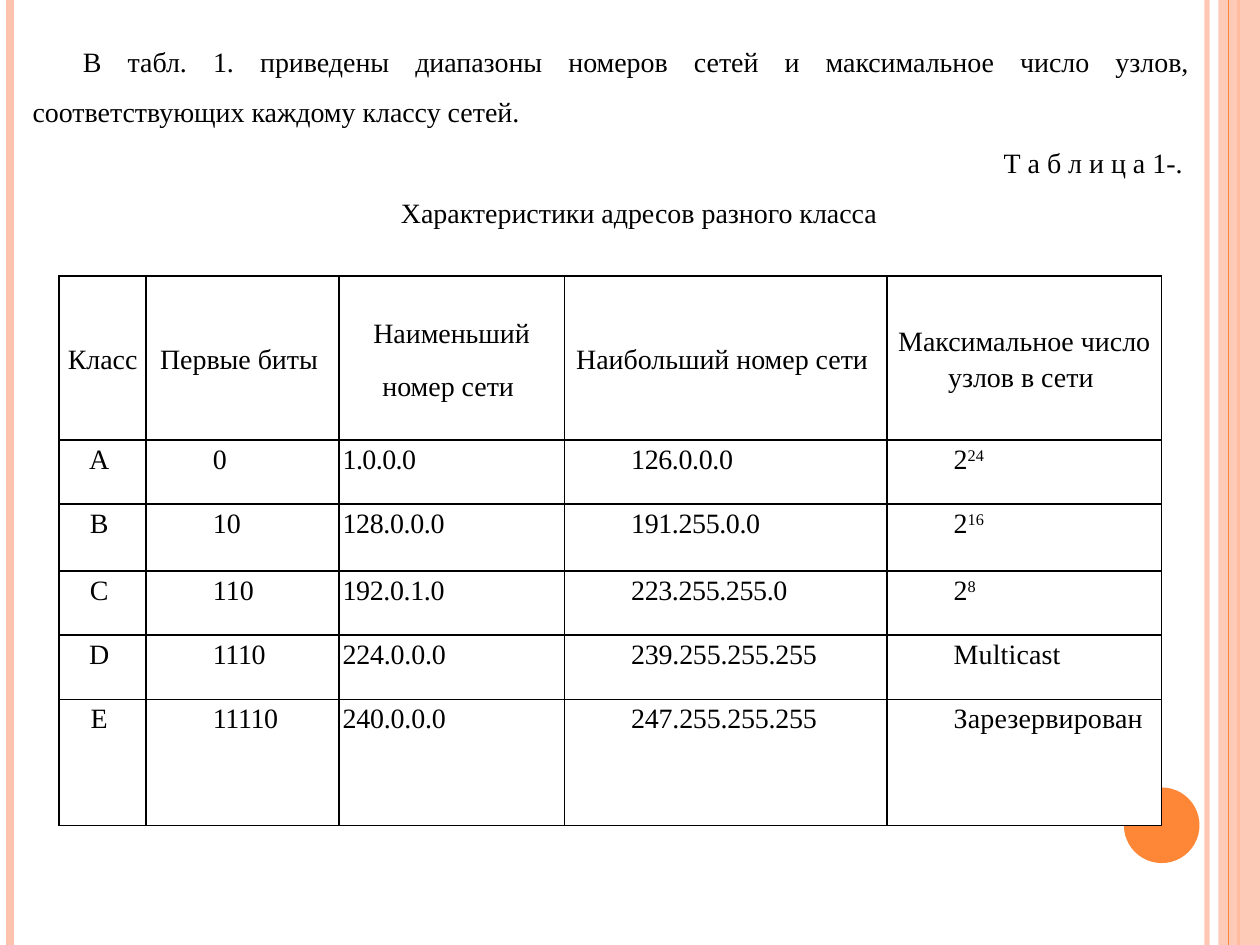
from lxml import etree
from pptx import Presentation, util as u
from pptx.dml.color import RGBColor
from pptx.enum import shapes, text
from pptx.oxml.ns import qn

WIDE, HIGH = 10, 7.5
FONT, SIZE = "Times New Roman", 16
PEACH, ORANGE, BLACK, WHITE = "FEC3AE", "FE8637", "000000", "FFFFFF"
AL = text.PP_ALIGN

COLS = [0.69, 1.53, 1.79, 2.56, 2.18]
ROWS = [1.3, 0.51, 0.53, 0.51, 0.51, 1]
HEAD = ["Класс", "Первые биты ", "Наименьший\nномер сети ",
        "Наибольший номер сети ", "Максимальное число узлов в сети "]
# A caret marks where a superscript starts
BODY = [
    ["А ", "0 ", "1.0.0.0 ", "126.0.0.0 ", "2^24 "],
    ["В ", "10 ", "128.0.0.0 ", "191.255.0.0 ", "2^16 "],
    ["С ", "110 ", "192.0.1.0 ", "223.255.255.0 ", "2^8"],
    ["D ", "1110 ", "224.0.0.0 ", "239.255.255.255 ", "Multicast "],
    ["Е ", "11110 ", "240.0.0.0 ", "247.255.255.255 ", "Зарезервирован "],
]
# Letter spacing of the body cells, in hundredths of a point
TRACK = [
    [0, 0, -30, -20, 0],
    [0, 0, -20, -20, 0],
    [0, 0, -20, -20, 0],
    [0, -20, -10, -10, 10],
    [0, -20, -10, -10, 10],
]


def paint(item, color, alpha=None):
    """Give a fill or line one solid colour, with opacity in percent."""
    item.solid()
    item.fore_color.rgb = RGBColor.from_string(color)
    if alpha:
        clr = item._xPr.find(".//" + qn("a:srgbClr"))
        etree.SubElement(clr, qn("a:alpha")).set("val", str(alpha * 1000))


def write(para, words, align=AL.CENTER, indent=0, lines=1.15, after=0, track=0):
    """Fill one paragraph; a caret raises what follows it."""
    para.alignment = align
    para.line_spacing = lines
    para.space_before, para.space_after = u.Pt(0), u.Pt(after)
    props = para._p.get_or_add_pPr()
    props.set("marL", "0")
    props.set("indent", str(u.Inches(indent)))
    for up, part in enumerate(words.split("^")):
        run = para.add_run()
        run.text = part
        font = run.font
        font.name, font.size = FONT, u.Pt(SIZE)
        font.color.rgb = RGBColor.from_string(BLACK)
        rpr = run._r.get_or_add_rPr()
        if track:
            rpr.set("spc", str(track))
        if up:
            rpr.set("baseline", "30000")


def stripe(slide, x, width, color, alpha=None):
    """Draw a line down the full height of the slide."""
    line = slide.shapes.add_connector(shapes.MSO_CONNECTOR.STRAIGHT,
                                      u.Inches(x), 0, u.Inches(x), u.Inches(HIGH))
    line.line.width = u.Pt(width)
    paint(line.line.fill, color, alpha)
    etree.SubElement(line._element.spPr, qn("a:effectLst"))


def block(slide, kind, box, color, alpha=None):
    shape = slide.shapes.add_shape(kind, *map(u.Inches, box))
    shape.shadow.inherit = False
    paint(shape.fill, color, alpha)
    shape.line.fill.background()


def frame(cell):
    """Put a thin black border on all four sides of a cell."""
    props = cell._tc.get_or_add_tcPr()
    for i, side in enumerate(("a:lnL", "a:lnR", "a:lnT", "a:lnB")):
        edge = etree.Element(qn(side), w=str(u.Pt(1)))
        fill = etree.SubElement(edge, qn("a:solidFill"))
        etree.SubElement(fill, qn("a:srgbClr"), val=BLACK)
        props.insert(i, edge)


def fill_cell(cell, words, anchor, **form):
    cell.margin_left = cell.margin_right = u.Inches(0.03)
    cell.margin_top = cell.margin_bottom = 0
    cell.vertical_anchor = anchor
    paint(cell.fill, WHITE)
    frame(cell)
    for i, part in enumerate(words.split("\n")):
        para = cell.text_frame.add_paragraph() if i else cell.text_frame.paragraphs[0]
        write(para, part, after=10, **form)


def decor(slide):
    stripe(slide, 9.58, 3, PEACH, 93)
    stripe(slide, 0.08, 4.5, PEACH)
    stripe(slide, 9.83, 1.5, ORANGE)
    block(slide, shapes.MSO_SHAPE.RECTANGLE, (9.67, 0, 0.33, HIGH), PEACH, 87)
    stripe(slide, 9.75, 0.75, ORANGE)
    block(slide, shapes.MSO_SHAPE.OVAL, (8.92, 6.25, 0.6, 0.6), ORANGE)


def intro(slide):
    box = slide.shapes.add_textbox(*map(u.Inches, (0.16, 0.16, 9.38, 1.72)))
    body = box.text_frame
    body.word_wrap = True
    body.auto_size = text.MSO_AUTO_SIZE.SHAPE_TO_FIT_TEXT
    body.vertical_anchor = text.MSO_ANCHOR.MIDDLE
    write(body.paragraphs[0], "В табл. 1. приведены диапазоны номеров сетей и максимальное "
          "число узлов, соответствующих каждому классу сетей.",
          align=AL.JUSTIFY, indent=0.4, lines=1.5)
    write(body.add_paragraph(), " Т а б л и ц а 1-. ",
          align=AL.RIGHT, indent=0.5, lines=1.5)
    write(body.add_paragraph(), "Характеристики адресов разного класса ",
          indent=0.5, lines=1.5)


def grid(slide):
    area = (0.47, 2.19, sum(COLS), sum(ROWS))
    table = slide.shapes.add_table(len(ROWS), len(COLS), *map(u.Inches, area)).table
    for col, width in zip(table.columns, COLS):
        col.width = u.Inches(width)
    for row, height in zip(table.rows, ROWS):
        row.height = u.Inches(height)
    for c, words in enumerate(HEAD):
        fill_cell(table.cell(0, c), words, text.MSO_ANCHOR.MIDDLE)
    for r, row in enumerate(BODY):
        for c, words in enumerate(row):
            fill_cell(table.cell(r + 1, c), words, text.MSO_ANCHOR.TOP,
                      align=AL.JUSTIFY if c else AL.CENTER,
                      indent=0 if c in (0, 2) else 0.5, track=TRACK[r][c])


def main():
    deck = Presentation()
    deck.slide_width, deck.slide_height = u.Inches(WIDE), u.Inches(HIGH)
    slide = deck.slides.add_slide(deck.slide_layouts[6])
    paint(slide.background.fill, WHITE)
    decor(slide)
    intro(slide)
    grid(slide)
    deck.save("out.pptx")


if __name__ == "__main__":
    main()
